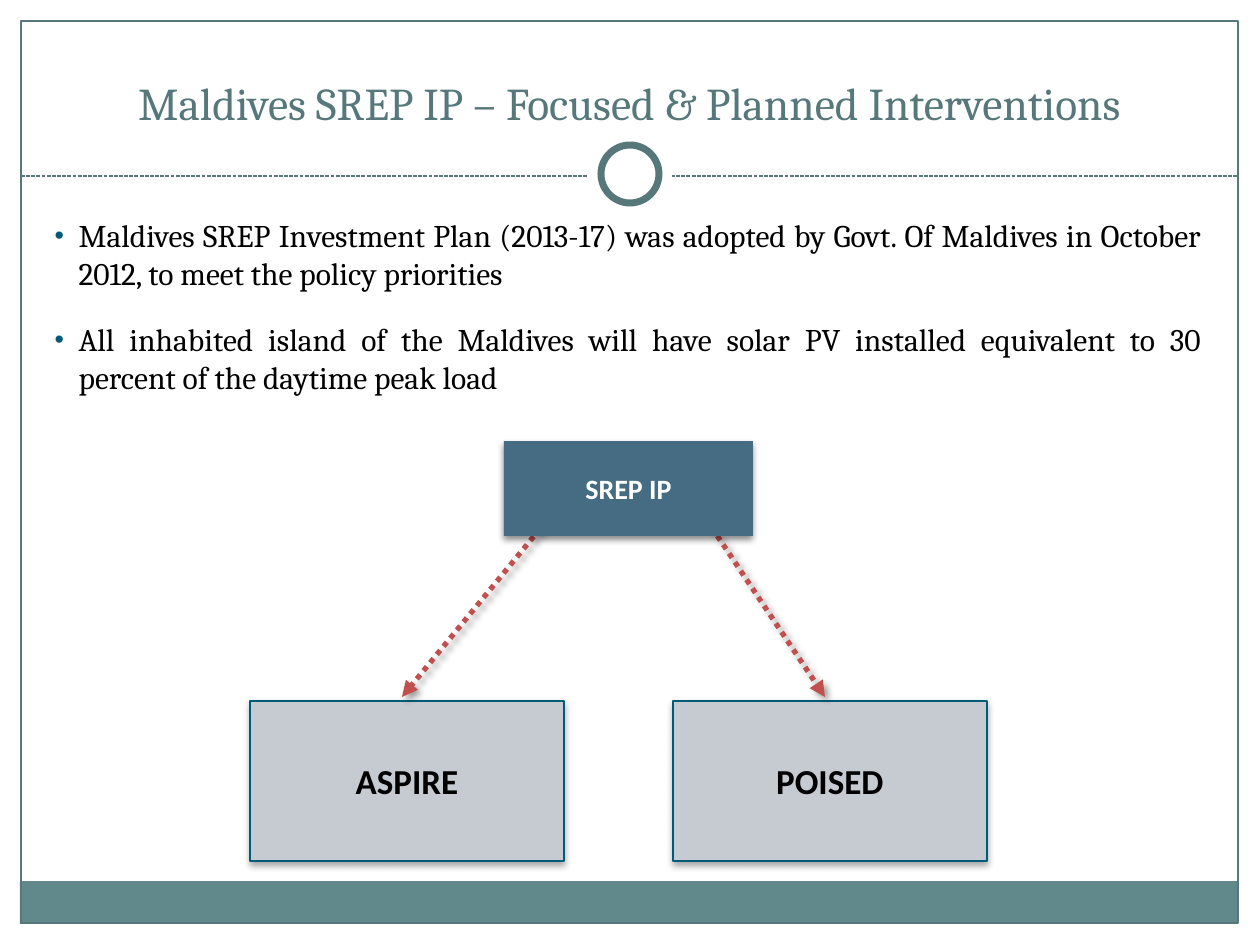
import dataclasses

import lxml.etree
import pptx
import pptx.dml.color
import pptx.enum.dml
import pptx.enum.shapes
import pptx.enum.text
import pptx.oxml.ns
import pptx.util

SHAPE = pptx.enum.shapes.MSO_SHAPE
ALIGN = pptx.enum.text.PP_ALIGN
ANCHOR = pptx.enum.text.MSO_ANCHOR
DASH = pptx.enum.dml.MSO_LINE
qn = pptx.oxml.ns.qn


@dataclasses.dataclass(frozen=True)
class Theme:
    heading: str = "Cambria"
    label: str = "Calibri"
    white: str = "FFFFFF"
    black: str = "000000"
    frame: str = "56787A"
    footer: str = "61888A"
    accent: str = "005B78"
    plan: str = "456C83"
    project: str = "C5CBD1"
    arrow: str = "C0504D"
    title_size: int = 26
    body_size: int = 18
    plan_size: int = 16
    project_size: int = 20


THEME = Theme()


def px(n):
    return pptx.util.Emu(round(n * 914400 / 126))


def rgb(value):
    return pptx.dml.color.RGBColor.from_string(value)


def sub(parent, tag, **attrs):
    return lxml.etree.SubElement(
        parent, qn(tag), {name: str(value) for name, value in attrs.items()})


def set_font(p, name, size, color, bold=False):
    p.font.name = name
    p.font.size = pptx.util.Pt(size)
    p.font.color.rgb = rgb(color)
    p.font.bold = bold


def set_line(line, color, width, dash=None):
    line.color.rgb = rgb(color)
    line.width = pptx.util.Pt(width)
    if dash:
        line.dash_style = dash


def add_shadow(effects, opacity, blur, distance, angle):
    shadow = sub(effects, "a:outerShdw", blurRad=pptx.util.Pt(blur),
                 dist=pptx.util.Pt(distance), dir=angle * 60000,
                 algn="ctr", rotWithShape=0)
    color = sub(shadow, "a:srgbClr", val=THEME.black)
    sub(color, "a:alpha", val=opacity * 1000)


def place(sp, x, y, w, h):
    sp.left, sp.top, sp.width, sp.height = px(x), px(y), px(w), px(h)


def add_shape(s, kind, box, fill=None, line=None, width=0.75):
    sp = s.shapes.add_shape(kind, *map(px, box))
    sp.shadow.inherit = False
    if fill:
        sp.fill.solid()
        sp.fill.fore_color.rgb = rgb(fill)
    else:
        sp.fill.background()
    if line:
        set_line(sp.line, line, width)
    else:
        sp.line.fill.background()
    return sp


def add_box(s, text, box, fill, color, size, opacity, line=None):
    sp = add_shape(s, SHAPE.RECTANGLE, box, fill, line)
    add_shadow(sp._element.spPr.find(qn("a:effectLst")), opacity, 4, 2, 90)
    tf = sp.text_frame
    tf.vertical_anchor = ANCHOR.MIDDLE
    p = tf.paragraphs[0]
    p.text = text
    p.alignment = ALIGN.CENTER
    set_font(p, THEME.label, size, color, bold=True)


def add_line(s, start, end, color, width, dash):
    line = s.shapes.add_connector(
        pptx.enum.shapes.MSO_CONNECTOR.STRAIGHT, *map(px, start + end))
    set_line(line.line, color, width, dash)
    return line, sub(line._element.spPr, "a:effectLst")


def add_arrow(s, start, end):
    line, effects = add_line(s, start, end, THEME.arrow, 3, DASH.ROUND_DOT)
    sub(line.line._get_or_add_ln(), "a:tailEnd", type="triangle")
    add_shadow(effects, 40, 4, 3, 45)


def add_decoration(s):
    add_shape(s, SHAPE.RECTANGLE, (20, 881, 1218, 43), THEME.footer)
    add_shape(s, SHAPE.RECTANGLE, (21, 21, 1217, 902), line=THEME.frame)
    add_line(s, (21, 176), (1238, 176), THEME.frame, 0.75, DASH.SQUARE_DOT)
    add_shape(s, SHAPE.OVAL, (588, 132, 84, 84), THEME.white)
    add_shape(s, SHAPE.OVAL, (601, 145, 58, 58), THEME.white, THEME.frame, 4)


def fill_title(sp, text):
    place(sp, 42, 32, 1176, 104)
    tf = sp.text_frame
    tf.auto_size = pptx.enum.text.MSO_AUTO_SIZE.NONE
    tf.vertical_anchor = ANCHOR.BOTTOM
    p = tf.paragraphs[0]
    p.text = text
    p.alignment = ALIGN.CENTER
    set_font(p, THEME.heading, THEME.title_size, THEME.frame)


def add_bullet(p):
    ppr = p._p.get_or_add_pPr()
    ppr.set("marL", str(px(24)))
    ppr.set("indent", str(-px(24)))
    sub(sub(ppr, "a:buClr"), "a:srgbClr", val=THEME.accent)
    sub(ppr, "a:buSzPct", val=85000)
    sub(ppr, "a:buFont", typeface="Arial")
    sub(ppr, "a:buChar", char="•")


def fill_body(sp, items):
    place(sp, 42, 210, 1172, 630)
    tf = sp.text_frame
    tf.auto_size = pptx.enum.text.MSO_AUTO_SIZE.NONE
    tf.text = "\n".join(items)
    for p in tf.paragraphs:
        p.alignment = ALIGN.JUSTIFY
        p.space_before = p.space_after = pptx.util.Pt(8)
        add_bullet(p)
        set_font(p, THEME.heading, THEME.body_size, THEME.black)


def add_diagram(s):
    for text, x in (("POISED", 673), ("ASPIRE", 250)):
        add_box(s, text, (x, 701, 314, 160), THEME.project, THEME.black,
                THEME.project_size, 35, THEME.accent)
    add_arrow(s, (567, 496), (402, 697))
    add_arrow(s, (694, 501), (825, 697))
    add_box(s, "SREP IP", (504, 441, 249, 95), THEME.plan, THEME.white,
            THEME.plan_size, 45)


def main():
    prs = pptx.Presentation()
    prs.slide_width, prs.slide_height = px(1260), px(945)
    s = prs.slides.add_slide(prs.slide_layouts[1])
    fill_title(s.shapes.title,
               "Maldives SREP IP – Focused & Planned Interventions")
    fill_body(s.placeholders[1], (
        "Maldives SREP Investment Plan (2013-17) was adopted by Govt. "
        "Of Maldives in October 2012, to meet the policy priorities",
        "All inhabited island of the Maldives will have solar PV installed "
        "equivalent to 30 percent of the daytime peak load",
    ))
    add_decoration(s)
    add_diagram(s)
    prs.save("out.pptx")


if __name__ == "__main__":
    main()
